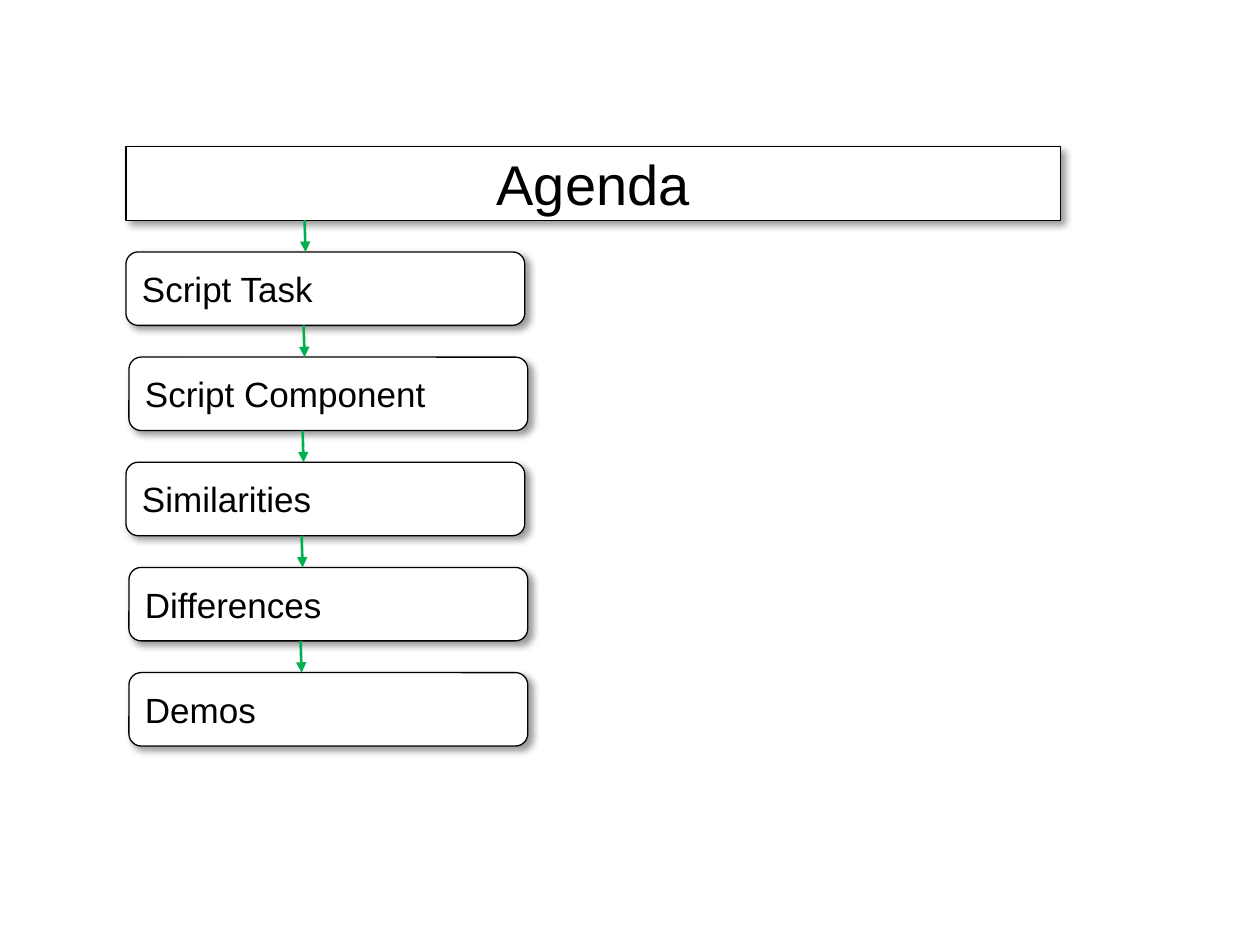
from dataclasses import dataclass

from lxml import etree
from pptx import Presentation
from pptx.dml.color import RGBColor
from pptx.enum.shapes import MSO_CONNECTOR, MSO_SHAPE
from pptx.enum.text import MSO_ANCHOR, MSO_AUTO_SIZE, PP_ALIGN
from pptx.oxml.ns import qn
from pptx.util import Cm, Pt

ROUNDED = MSO_SHAPE.ROUNDED_RECTANGLE
STRAIGHT = MSO_CONNECTOR.STRAIGHT
MIDDLE = MSO_ANCHOR.MIDDLE
NO_AUTOFIT = MSO_AUTO_SIZE.NONE
LEFT, CENTER = PP_ALIGN.LEFT, PP_ALIGN.CENTER

TITLE = "Agenda"
TOPICS = [
    ("Script Task", 0),
    ("Script Component", 0.06),
    ("Similarities", 0),
    ("Differences", 0.06),
    ("Demos", 0.06),
]


@dataclass(frozen=True)
class Theme:
    font: str = "Arial"
    title_size: int = 32
    topic_size: int = 20
    ink: str = "000000"
    paper: str = "FFFFFF"
    arrow: str = "00B050"
    outline: float = 0.75
    arrow_width: float = 1.5


THEME = Theme()

MARGIN, TOP = 2.54, 2.96
TITLE_WIDTH, TOPIC_WIDTH = 18.84, 8.04
BOX_HEIGHT, ROW_STEP = 1.48, 2.12
ARROW_X, ARROW_DRIFT, ARROW_SLANT = 6.14, 0.02, 0.02


def add_shadow(box):
    box.shadow.inherit = False
    effects = box._element.spPr.find(qn("a:effectLst"))
    shadow = etree.SubElement(
        effects, qn("a:outerShdw"), blurRad=str(Pt(4)), dist=str(Pt(3)),
        dir=str(45 * 60000), algn="tl", rotWithShape="0")
    color = etree.SubElement(shadow, qn("a:srgbClr"), val=THEME.ink)
    etree.SubElement(color, qn("a:alpha"), val="40000")


def format_box(box, text, size, alignment):
    box.fill.solid()
    box.fill.fore_color.rgb = RGBColor.from_string(THEME.paper)
    box.line.color.rgb = RGBColor.from_string(THEME.ink)
    box.line.width = Pt(THEME.outline)
    add_shadow(box)
    frame = box.text_frame
    frame.text = text
    frame.word_wrap = True
    frame.auto_size = NO_AUTOFIT
    frame.vertical_anchor = MIDDLE
    para = frame.paragraphs[0]
    para.alignment = alignment
    font = para.runs[0].font
    font.name = THEME.font
    font.size = Pt(size)
    font.color.rgb = RGBColor.from_string(THEME.ink)


def add_title(page):
    title = page.shapes.title
    title.left, title.top = Cm(MARGIN), Cm(TOP)
    title.width, title.height = Cm(TITLE_WIDTH), Cm(BOX_HEIGHT)
    outline = etree.SubElement(
        title._element.spPr, qn("a:prstGeom"), prst="roundRect")
    etree.SubElement(outline, qn("a:avLst"))
    format_box(title, TITLE, THEME.title_size, CENTER)


def add_arrow(page, x, top, bottom):
    arrow = page.shapes.add_connector(
        STRAIGHT, Cm(x), Cm(top), Cm(x + ARROW_SLANT), Cm(bottom))
    arrow.line.color.rgb = RGBColor.from_string(THEME.arrow)
    arrow.line.width = Pt(THEME.arrow_width)
    etree.SubElement(arrow.line._get_or_add_ln(), qn("a:tailEnd"), type="triangle")
    etree.SubElement(arrow._element.spPr, qn("a:effectLst"))


def main():
    deck = Presentation()
    deck.slide_width, deck.slide_height = Cm(25.4), Cm(19.05)
    page = deck.slides.add_slide(deck.slide_layouts[5])
    add_title(page)
    for row, (topic, shift) in enumerate(TOPICS, start=1):
        box = page.shapes.add_shape(
            ROUNDED, Cm(MARGIN + shift), Cm(TOP + row * ROW_STEP),
            Cm(TOPIC_WIDTH), Cm(BOX_HEIGHT))
        format_box(box, topic, THEME.topic_size, LEFT)
    for row in range(len(TOPICS)):
        row_top = TOP + row * ROW_STEP
        add_arrow(page, ARROW_X - row * ARROW_DRIFT,
                  row_top + BOX_HEIGHT, row_top + ROW_STEP)
    deck.save("out.pptx")


if __name__ == "__main__":
    main()
